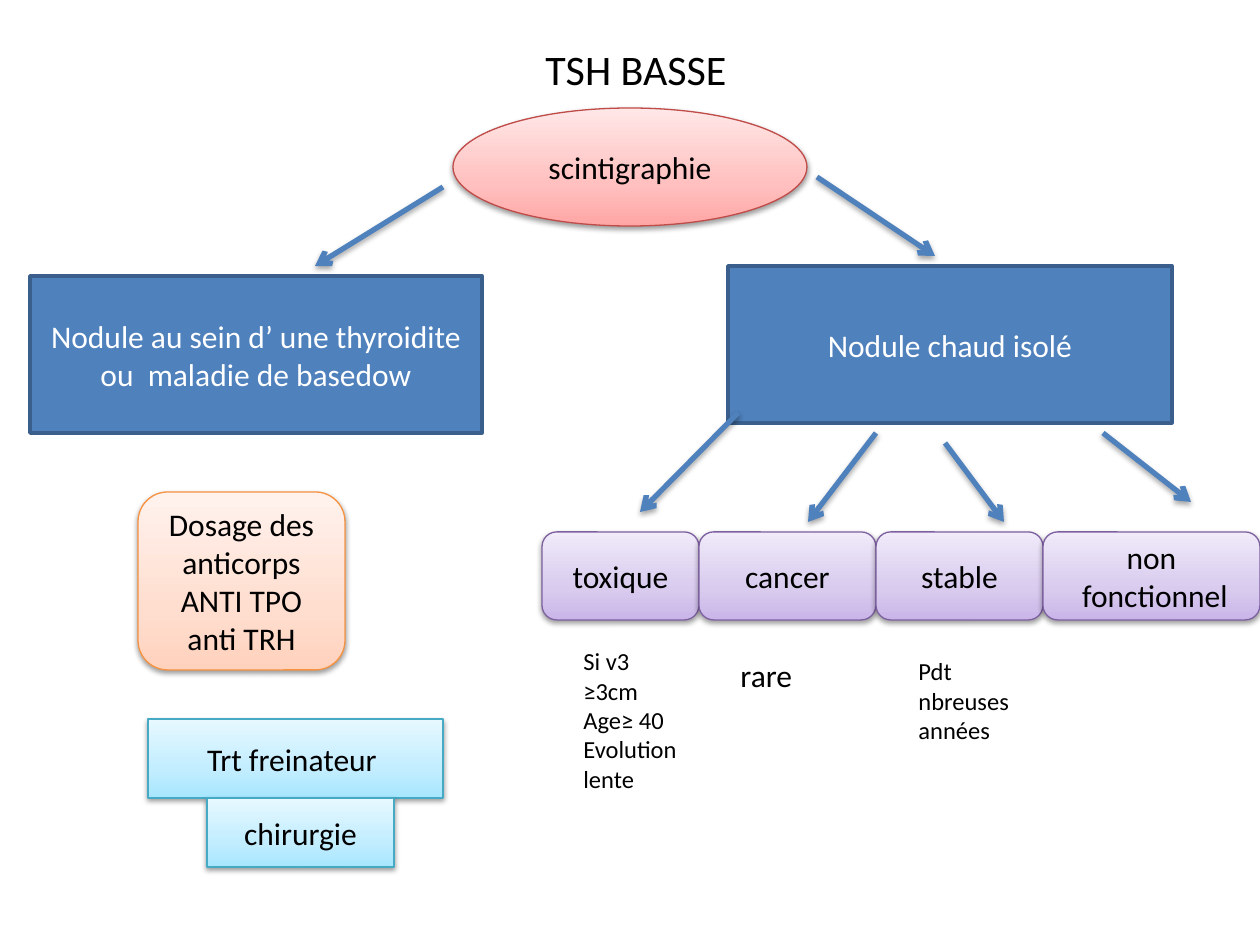
from copy import deepcopy

from lxml.etree import SubElement
from pptx import Presentation
from pptx.dml.color import RGBColor
from pptx.enum.shapes import MSO_CONNECTOR, MSO_SHAPE as SHAPE
from pptx.enum.text import MSO_ANCHOR as ANCHOR, MSO_AUTO_SIZE as AUTO_SIZE, PP_ALIGN as ALIGN
from pptx.oxml.ns import qn
from pptx.util import Emu, Pt

BLACK = RGBColor(0x00, 0x00, 0x00)
WHITE = RGBColor(0xFF, 0xFF, 0xFF)
BLUE = RGBColor(0x4F, 0x81, 0xBD)
DARK_BLUE = RGBColor(0x3A, 0x5F, 0x8C)
RED_EDGE = RGBColor(0xBF, 0x4C, 0x48)
ORANGE_EDGE = RGBColor(0xF6, 0x92, 0x40)
PURPLE_EDGE = RGBColor(0x7D, 0x60, 0xA0)
AQUA_EDGE = RGBColor(0x46, 0xAA, 0xC5)
REDS = RGBColor(0xFF, 0xA6, 0xA5), RGBColor(0xFF, 0xC0, 0xBF), RGBColor(0xFF, 0xE7, 0xE7)
ORANGES = RGBColor(0xFF, 0xD2, 0xBD), RGBColor(0xFF, 0xDE, 0xD0), RGBColor(0xFF, 0xF2, 0xED)
PURPLES = RGBColor(0xC9, 0xB5, 0xE8), RGBColor(0xD8, 0xCB, 0xEE), RGBColor(0xF0, 0xEA, 0xF9)
AQUAS = RGBColor(0xA7, 0xE6, 0xFF), RGBColor(0xC1, 0xED, 0xFF), RGBColor(0xE7, 0xF8, 0xFF)


def px(length):
    """Turn whole pixels into EMU."""
    return Emu(round(length * 914400 / 126))


def write(frame, text, size=18, color=BLACK, align=ALIGN.CENTER, anchor=ANCHOR.MIDDLE):
    """Fill a text frame, one paragraph for each line of text."""
    frame.word_wrap = True
    frame.vertical_anchor = anchor
    for index, line in enumerate(text.split("\n")):
        paragraph = frame.add_paragraph() if index else frame.paragraphs[0]
        paragraph.alignment = align
        run = paragraph.add_run()
        run.text = line
        run.font.name = "Calibri"
        run.font.size = Pt(size)
        run.font.color.rgb = color


def cast_shadow(effects, distance, opacity):
    """Add a soft downward shadow to an effect list."""
    shadow = SubElement(effects, qn("a:outerShdw"), blurRad="40000", dist=str(distance),
                        dir="5400000", rotWithShape="0")
    tint = SubElement(shadow, qn("a:srgbClr"), val=str(BLACK))
    SubElement(tint, qn("a:alpha"), val=str(opacity * 1000))


class FlowSlide:
    """Hold the flowchart style and the current slide."""

    def __init__(self, slide):
        """Start drawing on a slide."""
        self.slide = slide

    def title(self, text, *box):
        """Place and format the title."""
        heading = self.slide.shapes.title
        heading.left, heading.top, heading.width, heading.height = map(px, box)
        write(heading.text_frame, text, size=24)

    def node(self, kind, text, *box, edge, width=0.75, color=BLACK):
        """Draw an outlined shape with centred text."""
        node = self.slide.shapes.add_shape(kind, *map(px, box))
        node.line.color.rgb = edge
        node.line.width = Pt(width)
        node.shadow.inherit = False
        write(node.text_frame, text, color=color)
        return node

    def diagnosis(self, text, *box):
        """Draw a solid blue box."""
        box = self.node(SHAPE.RECTANGLE, text, *box, edge=DARK_BLUE, width=2, color=WHITE)
        box.fill.solid()
        box.fill.fore_color.rgb = BLUE

    def step(self, kind, text, *box, shades, edge):
        """Draw a shape with a three-stop gradient and a shadow."""
        step = self.node(kind, text, *box, edge=edge)
        step.fill.gradient()
        step.fill.gradient_angle = 90
        stops = step.element.spPr.find(f"{qn('a:gradFill')}/{qn('a:gsLst')}")
        stops.insert(1, deepcopy(stops[0]))
        for stop, shade, position in zip(step.fill.gradient_stops, shades, (0, 0.35, 1)):
            stop.color.rgb = shade
            stop.position = position
        cast_shadow(step.element.spPr.find(qn("a:effectLst")), 20000, 38)

    def arrow(self, *ends):
        """Draw a thick arrow with a shadow."""
        arrow = self.slide.shapes.add_connector(MSO_CONNECTOR.STRAIGHT, *map(px, ends))
        arrow.line.color.rgb = BLUE
        arrow.line.width = Pt(3)
        SubElement(arrow.line._get_or_add_ln(), qn("a:tailEnd"), type="arrow")
        cast_shadow(SubElement(arrow.element.spPr, qn("a:effectLst")), 23000, 35)

    def note(self, text, *box, size=14):
        """Write a plain note."""
        frame = self.slide.shapes.add_textbox(*map(px, box)).text_frame
        write(frame, text, size=size, align=ALIGN.LEFT, anchor=ANCHOR.TOP)
        frame.auto_size = AUTO_SIZE.SHAPE_TO_FIT_TEXT


def main():
    """Build the decision tree for a low TSH."""
    deck = Presentation()
    deck.slide_width, deck.slide_height = px(1260), px(945)
    flow = FlowSlide(deck.slides.add_slide(deck.slide_layouts[5]))

    flow.title("TSH BASSE", 69, 0, 1134, 137)
    flow.diagnosis("Nodule au sein d’ une thyroidite ou  maladie de basedow", 30, 276, 452, 157)
    flow.diagnosis("Nodule chaud isolé", 728, 266, 444, 157)
    flow.step(SHAPE.OVAL, "scintigraphie", 453, 108, 354, 118, shades=REDS, edge=RED_EDGE)
    flow.step(SHAPE.ROUNDED_RECTANGLE, "Dosage des anticorps ANTI TPO anti TRH",
              138, 492, 207, 178, shades=ORANGES, edge=ORANGE_EDGE)

    left = 542
    for outcome, width in (("toxique", 157), ("cancer", 177), ("stable", 167),
                           ("non\n fonctionnel", 217)):
        flow.step(SHAPE.ROUNDED_RECTANGLE, outcome, left, 532, width, 88,
                  shades=PURPLES, edge=PURPLE_EDGE)
        left += width

    for ends in ((876, 433, 808, 522), (1103, 433, 1191, 502), (738, 413, 640, 512),
                 (443, 187, 315, 266), (817, 177, 935, 256), (945, 443, 1004, 522)):
        flow.arrow(*ends)

    for treatment, *box in (("Trt freinateur ", 148, 719, 295, 79),
                            ("chirurgie", 207, 798, 187, 69)):
        flow.step(SHAPE.RECTANGLE, treatment, *box, shades=AQUAS, edge=AQUA_EDGE)

    flow.note("Si v3\n≥3cm\nAge≥ 40\nEvolution lente", 571, 640, 128, 161)
    flow.note("rare", 728, 650, 108, 51, size=18)
    flow.note("Pdt nbreuses années", 906, 650, 118, 102)

    deck.save("out.pptx")


if __name__ == "__main__":
    main()
